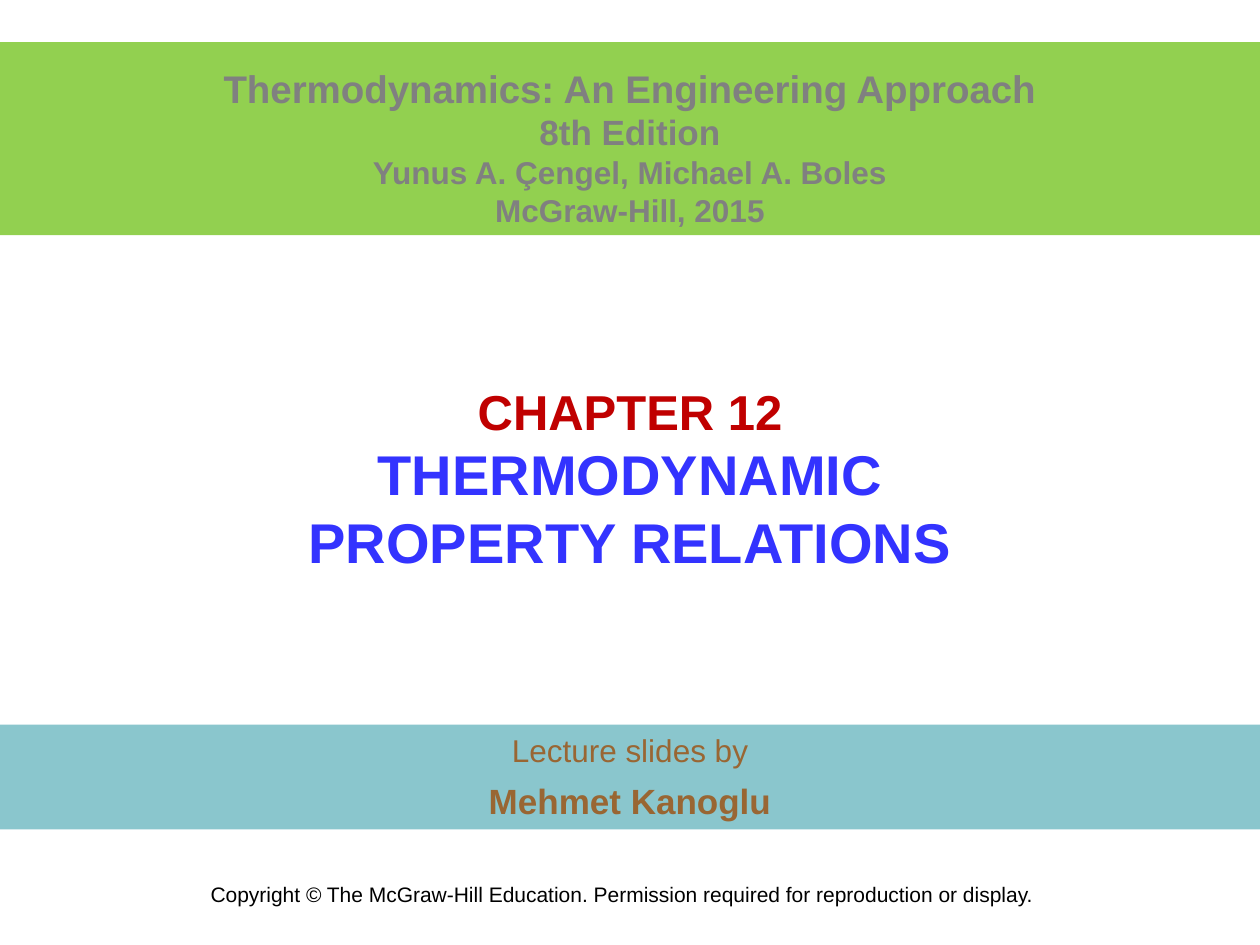
import pptx
import pptx.dml.color
import pptx.enum.shapes
import pptx.enum.text
import pptx.util

Pt = pptx.util.Pt
RGBColor = pptx.dml.color.RGBColor
ANCHOR = pptx.enum.text.MSO_ANCHOR

GREEN = RGBColor(0x92, 0xD0, 0x50)
TEAL = RGBColor(0x8A, 0xC6, 0xCD)
GRAY = RGBColor(0x80, 0x80, 0x80)
RED = RGBColor(0xC0, 0x00, 0x00)
BLUE = RGBColor(0x33, 0x33, 0xFF)
BROWN = RGBColor(0x99, 0x66, 0x33)
BLACK = RGBColor(0x00, 0x00, 0x00)


def write_lines(frame, lines, gap=0):
    for index, (text, size, bold, color) in enumerate(lines):
        para = frame.paragraphs[0] if index == 0 else frame.add_paragraph()
        para.text = text
        para.alignment = pptx.enum.text.PP_ALIGN.CENTER
        para.space_before = Pt(gap if index else 0)
        para.space_after = Pt(gap)
        para.font.name = "Arial"
        para.font.size = Pt(size)
        para.font.bold = bold
        para.font.color.rgb = color


def add_band(page, box, fill, lines, top_margin=3.6, gap=0):
    band = page.shapes.add_shape(
        pptx.enum.shapes.MSO_SHAPE.RECTANGLE, *map(Pt, box))
    band.shadow.inherit = False
    band.fill.solid()
    band.fill.fore_color.rgb = fill
    band.line.fill.background()
    frame = band.text_frame
    frame.word_wrap = True
    frame.vertical_anchor = ANCHOR.TOP
    frame.margin_top = Pt(top_margin)
    write_lines(frame, lines, gap)


def place_title(page, box, lines):
    title = page.shapes.title
    title.left, title.top, title.width, title.height = map(Pt, box)
    title.text_frame.word_wrap = True
    title.text_frame.vertical_anchor = ANCHOR.MIDDLE
    write_lines(title.text_frame, lines)


def add_copyright(page, box, text):
    notice = page.shapes.add_textbox(*map(Pt, box))
    notice.text_frame.word_wrap = False
    write_lines(notice.text_frame, [(text, 12, False, BLACK)])


def main():
    deck = pptx.Presentation()
    deck.slide_width, deck.slide_height = Pt(720), Pt(540)
    page = deck.slides.add_slide(deck.slide_layouts.get_by_name("Title Only"))

    place_title(page, (126, 192, 468, 162), [
        ("CHAPTER 12", 28, True, RED),
        ("THERMODYNAMIC PROPERTY RELATIONS", 32, True, BLUE),
    ])
    add_band(page, (0, 414, 720, 60), TEAL, [
        ("Lecture slides by", 18, False, BROWN),
        ("Mehmet Kanoglu", 20, True, BROWN),
    ], gap=3)
    add_copyright(
        page, (111.6, 500.4, 488, 21.6),
        "Copyright © The McGraw-Hill Education. "
        "Permission required for reproduction or display.")
    add_band(page, (0, 24, 720, 110.4), GREEN, [
        ("Thermodynamics: An Engineering Approach", 22, True, GRAY),
        ("8th Edition", 20, True, GRAY),
        ("Yunus A. Çengel, Michael A. Boles", 18, True, GRAY),
        ("McGraw-Hill, 2015", 18, True, GRAY),
    ], top_margin=13)

    deck.save("out.pptx")


if __name__ == "__main__":
    main()
